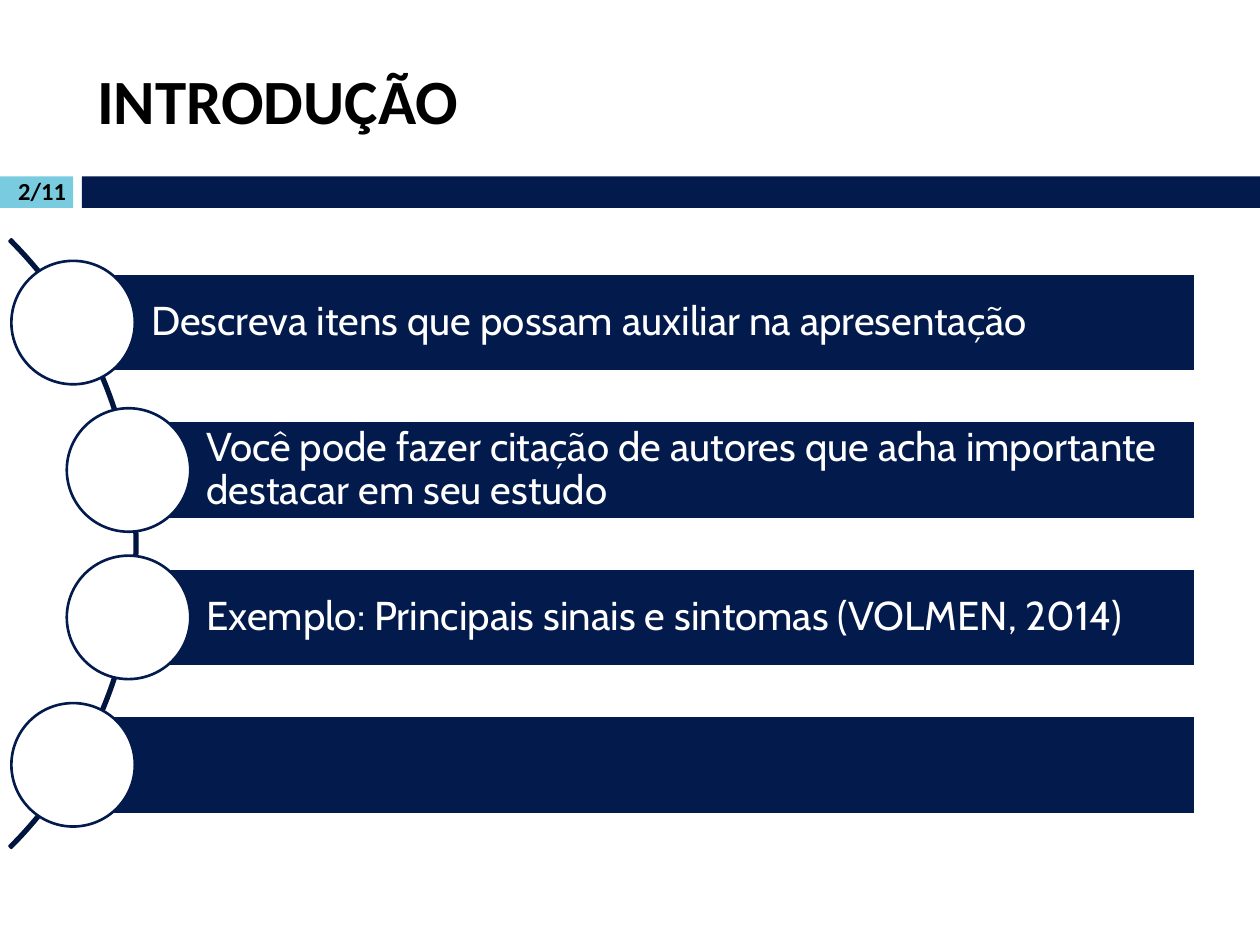
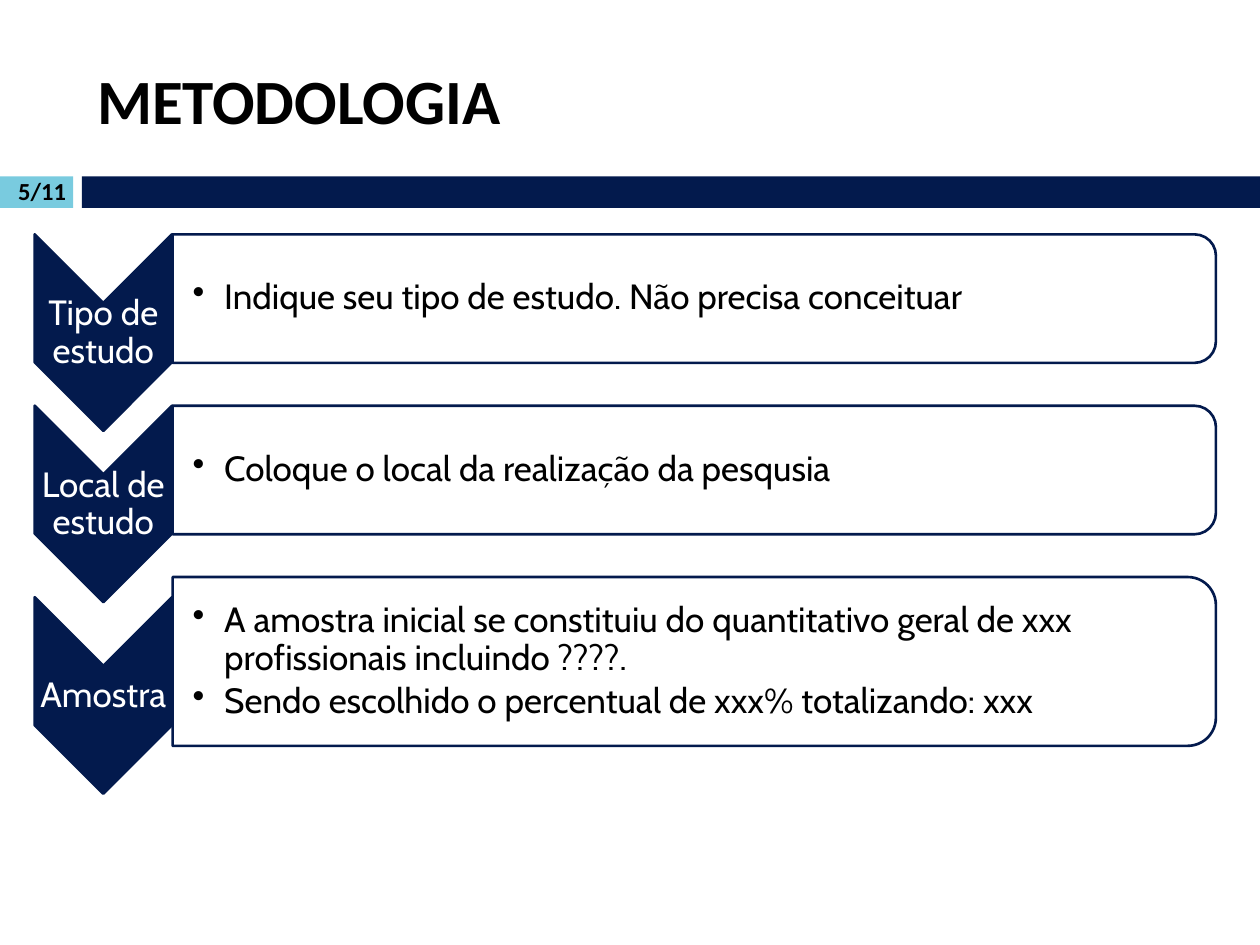
from lxml import etree
from pptx import Presentation
from pptx.dml.color import RGBColor
from pptx.enum.shapes import MSO_SHAPE
from pptx.enum.text import MSO_ANCHOR, MSO_AUTO_SIZE, PP_ALIGN
from pptx.oxml.ns import qn
from pptx.util import Inches, Pt

RECTANGLE, OVAL = MSO_SHAPE.RECTANGLE, MSO_SHAPE.OVAL
ARC, CHEVRON = MSO_SHAPE.BLOCK_ARC, MSO_SHAPE.CHEVRON
ROUNDED_TOP = MSO_SHAPE.ROUND_2_SAME_RECTANGLE
LEFT, CENTER, JUSTIFY = PP_ALIGN.LEFT, PP_ALIGN.CENTER, PP_ALIGN.JUSTIFY
MIDDLE, NO_FIT = MSO_ANCHOR.MIDDLE, MSO_AUTO_SIZE.NONE

COLORS = {"navy": "031A4D", "arc": "02153E", "sky": "79CBDF",
          "white": "FFFFFF", "black": "000000"}
TITLE = {"name": "Calibri", "size": Pt(36), "bold": True}
NUMBER = {"name": "Calibri", "size": Pt(14), "bold": True}
BAR_TEXT = {"name": "Cabin", "size": Pt(23)}
STEP_TEXT = {"name": "Cabin", "size": Pt(20)}


def draw(page, kind, left, top, width, height, fill=None, line=None, turn=0):
    """Add a flat preset shape; fill and line are keys of COLORS."""
    shape = page.shapes.add_shape(kind, Inches(left), Inches(top),
                                  Inches(width), Inches(height))
    shape.shadow.inherit = False
    shape.rotation = turn
    if fill:
        shape.fill.solid()
        shape.fill.fore_color.rgb = RGBColor.from_string(COLORS[fill])
    else:
        shape.fill.background()
    if line:
        shape.line.color.rgb = RGBColor.from_string(COLORS[line])
        shape.line.width = Pt(1.5)
    else:
        shape.line.fill.background()
    return shape


def write(shape, lines, style, color, align=LEFT, insets=(0.1, 0.05, 0.1, 0.05),
          spacing=0.9, bullets=False):
    """Fill a shape with one paragraph per line; insets run left, top, right, bottom."""
    frame = shape.text_frame
    frame.word_wrap = True
    frame.auto_size = NO_FIT
    frame.vertical_anchor = MIDDLE
    for side, inset in zip(("left", "top", "right", "bottom"), insets):
        setattr(frame, f"margin_{side}", Inches(inset))
    for index, line in enumerate(lines):
        para = frame.add_paragraph() if index else frame.paragraphs[0]
        para.alignment = align
        para.line_spacing = spacing
        span = para.add_run()
        span.text = line
        span.font.color.rgb = RGBColor.from_string(COLORS[color])
        for name, value in style.items():
            setattr(span.font, name, value)
        if bullets:
            para.space_after = Pt(3)
            props = para._p.get_or_add_pPr()
            props.set("marL", str(Inches(0.25)))
            props.set("indent", str(Inches(-0.25)))
            etree.SubElement(props, qn("a:buChar")).set("char", "•")


deck = Presentation()
deck.slide_width, deck.slide_height = Inches(10), Inches(7.5)

# Title, band and page number of both slides
pages = []
for heading, number in (("INTRODUÇÃO", "2/11"), ("METODOLOGIA", "5/11")):
    page = deck.slides.add_slide(deck.slide_layouts[5])
    title = page.shapes.title
    title.left, title.top = Inches(0.67), Inches(0.25)
    title.width, title.height = Inches(9.33), Inches(1.08)
    write(title, [heading], TITLE, "black", spacing=1.0)
    draw(page, RECTANGLE, 0, 1.4, 0.58, 0.25, "sky")
    draw(page, RECTANGLE, 0.65, 1.4, 9.35, 0.25, "navy")
    box = page.shapes.add_textbox(0, Inches(1.36), Inches(0.67), Inches(0.3))
    write(box, [number], NUMBER, "black", CENTER, spacing=1.0)
    pages.append(page)
intro, method = pages

# Introduction: bars with circles strung along an arc
arc = draw(intro, ARC, -5.74, 0.9, 6.83, 6.83, line="arc")
for index, value in enumerate((189, 27, 0.003)):
    arc.adjustments[index] = value

BAR_RIGHT, BAR_HEIGHT, CIRCLE = 9.49, 0.78, 0.98
items = [
    (0.58, "Descreva itens que possam auxiliar na apresentação"),
    (1.02, "Você pode fazer citação de autores que acha importante "
           "destacar em seu estudo"),
    (1.02, "Exemplo: Principais sinais e sintomas (VOLMEN, 2014)"),
    (0.58, ""),
]
for index, (center_x, item) in enumerate(items):
    center_y = 2.56 + 1.17 * index
    bar = draw(intro, RECTANGLE, center_x, center_y - BAR_HEIGHT / 2,
               BAR_RIGHT - center_x, BAR_HEIGHT, "navy", "white")
    if item:
        write(bar, [item], BAR_TEXT, "white", insets=(0.62, 0.06, 0.06, 0.06))
    draw(intro, OVAL, center_x - CIRCLE / 2, center_y - CIRCLE / 2,
         CIRCLE, CIRCLE, "white", "navy")

# Methodology: a downward chevron and a panel for each step
CHEVRON_LENGTH, CHEVRON_WIDTH, CHEVRON_X = 1.56, 1.09, 0.82
PANEL_LEFT, PANEL_WIDTH = 1.37, 8.28
steps = [
    ("Tipo de estudo", 2.37, 1.02, LEFT,
     ["Indique seu tipo de estudo. Não precisa conceituar"]),
    ("Local de estudo", 3.73, 1.02, JUSTIFY,
     ["Coloque o local da realização da pesqusia"]),
    ("Amostra", 5.25, 1.34, LEFT,
     ["A amostra inicial se constituiu do quantitativo geral de xxx "
      "profissionais incluindo ????.",
      "Sendo escolhido o percentual de xxx% totalizando: xxx"]),
]
for label, center_y, height, align, notes in steps:
    chevron_y = center_y + 0.27
    draw(method, CHEVRON, CHEVRON_X - CHEVRON_LENGTH / 2,
         chevron_y - CHEVRON_WIDTH / 2, CHEVRON_LENGTH, CHEVRON_WIDTH,
         "navy", "navy", turn=90)
    box = method.shapes.add_textbox(
        Inches(CHEVRON_X - CHEVRON_WIDTH / 2), Inches(chevron_y - 0.23),
        Inches(CHEVRON_WIDTH), Inches(0.47))
    write(box, [label], STEP_TEXT, "white", CENTER, insets=[0.01] * 4)
    # Turned a quarter, the panel's height becomes its drawn width
    draw(method, ROUNDED_TOP, PANEL_LEFT + (PANEL_WIDTH - height) / 2,
         center_y - PANEL_WIDTH / 2, height, PANEL_WIDTH,
         "white", "navy", turn=90)
    box = method.shapes.add_textbox(
        Inches(PANEL_LEFT), Inches(center_y - height * 0.45),
        Inches(8.23), Inches(height * 0.9))
    write(box, notes, STEP_TEXT, "black", align,
          insets=(0.16, 0.01, 0.01, 0.01), bullets=True)

deck.save("out.pptx")
